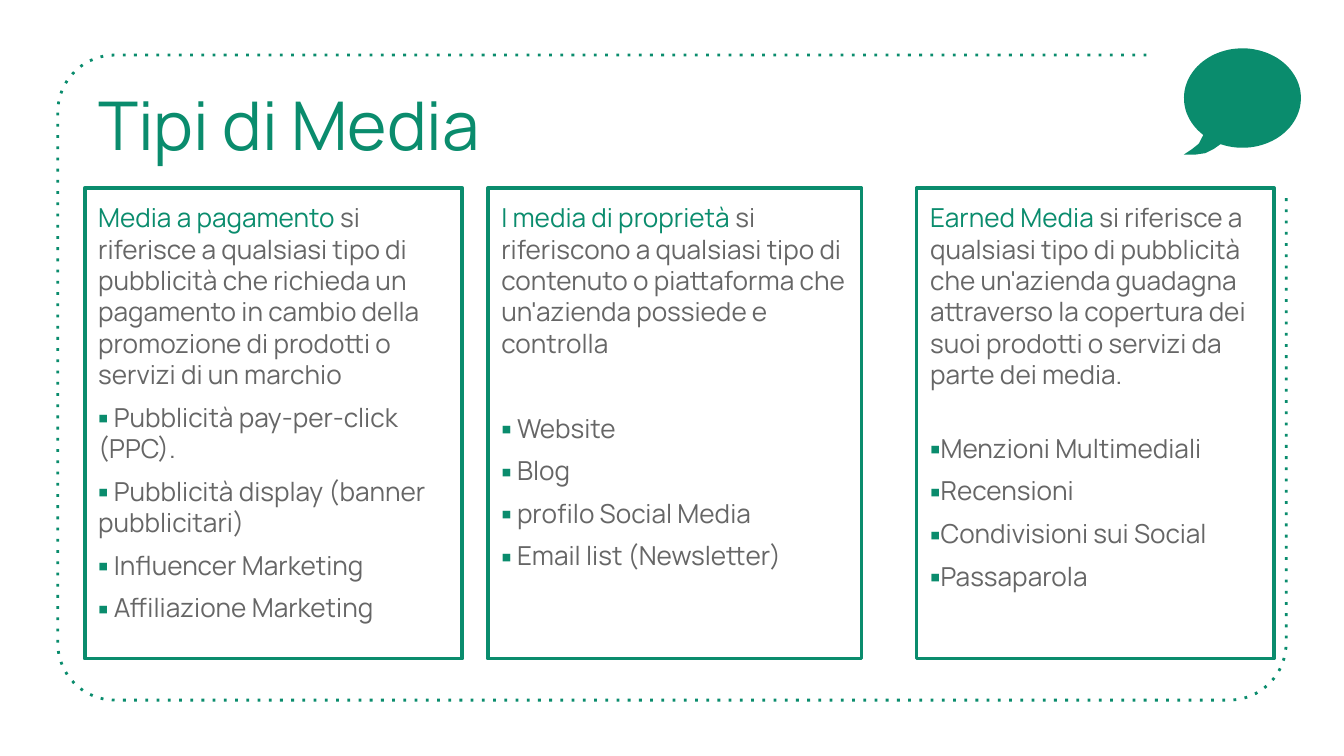
import math

import pptx
import pptx.dml.color
import pptx.enum.text
import pptx.oxml
import pptx.oxml.ns
import pptx.util

COLORS = {"green": "0A8C6D", "gray": "666666", "white": "FFFFFF"}

COLUMNS = [
    {
        "left": 6.3, "width": 28.1, "gap": 6,
        "term": "Media a pagamento ",
        "text": "si riferisce a qualsiasi tipo di pubblicità che richieda un pagamento "
                "in cambio della promozione di prodotti o servizi di un marchio",
        "items": [" Pubblicità pay-per-click (PPC).",
                  " Pubblicità display (banner pubblicitari)",
                  " Influencer Marketing", " Affiliazione Marketing"],
    },
    {
        "left": 36.3, "width": 27.8, "gap": 28.7,
        "term": "I media di proprietà ",
        "text": "si riferiscono a qualsiasi tipo di contenuto o piattaforma che "
                "un'azienda possiede e controlla",
        "items": [" Website", " Blog", " profilo Social Media",
                  " Email list (Newsletter)"],
    },
    {
        "left": 68.2, "width": 26.6, "gap": 22.7,
        "term": "Earned Media ",
        "text": "si riferisce a qualsiasi tipo di pubblicità che un'azienda guadagna "
                "attraverso la copertura dei suoi prodotti o servizi da parte dei media.",
        "items": ["Menzioni Multimediali", "Recensioni", "Condivisioni sui Social",
                  "Passaparola"],
    },
]


def arc(cx, cy, rx, ry, start, end, steps):
    angles = [math.radians(start + (end - start) * i / steps) for i in range(steps + 1)]
    return [(cx + rx * math.cos(a), cy + ry * math.sin(a)) for a in angles]


class Deck:
    font = "Manrope"
    grid_columns, grid_rows = 100, 56.25

    def __init__(self, width, height):
        self.prs = pptx.Presentation()
        self.prs.slide_width = pptx.util.Inches(width)
        self.prs.slide_height = pptx.util.Inches(height)
        self.slide = self.prs.slides.add_slide(self.prs.slide_layouts[4])

    def x(self, columns):
        return round(self.prs.slide_width * columns / self.grid_columns)

    def y(self, rows):
        return round(self.prs.slide_height * rows / self.grid_rows)

    def color(self, name):
        return pptx.dml.color.RGBColor.from_string(COLORS[name])

    def place(self, sp, left, top, width, height):
        sp.left, sp.top = self.x(left), self.y(top)
        sp.width, sp.height = self.x(width), self.y(height)
        tf = sp.text_frame
        tf.word_wrap = True
        tf.auto_size = pptx.enum.text.MSO_AUTO_SIZE.NONE
        tf.vertical_anchor = pptx.enum.text.MSO_ANCHOR.TOP
        tf.margin_left = tf.margin_right = self.x(1)
        tf.margin_top = tf.margin_bottom = self.y(1)
        return tf

    def paragraph(self, p, runs, size, before=0, bullet=None):
        p.alignment = pptx.enum.text.PP_ALIGN.LEFT
        p.space_before = pptx.util.Pt(before)
        pPr = p._p.get_or_add_pPr()
        pPr.set("marL", "0")
        pPr.set("indent", str(-self.x(1) if bullet else 0))
        ns = pptx.oxml.ns.nsdecls("a")
        if bullet:
            marks = [f'<a:buClr {ns}><a:srgbClr val="{COLORS["green"]}"/></a:buClr>',
                     f'<a:buFont {ns} typeface="{self.font}"/>',
                     f'<a:buChar {ns} char="{bullet}"/>']
        else:
            marks = [f"<a:buNone {ns}/>"]
        for mark in marks:
            pPr.append(pptx.oxml.parse_xml(mark))
        for text, color in runs:
            r = p.add_run()
            r.text = text
            r.font.name = self.font
            r.font.size = pptx.util.Pt(size)
            r.font.bold = False
            r.font.color.rgb = self.color(color)

    def title(self, text, *box):
        tf = self.place(self.slide.shapes.title, *box)
        self.paragraph(tf.paragraphs[0], [(text, "green")], 36)

    def card(self, idx, column, top, height):
        sp = self.slide.placeholders[idx]
        tf = self.place(sp, column["left"], top, column["width"], height)
        sp.fill.solid()
        sp.fill.fore_color.rgb = self.color("white")
        sp.line.color.rgb = self.color("green")
        sp.line.width = pptx.util.Pt(2)
        intro = [(column["term"], "green"), (column["text"], "gray")]
        self.paragraph(tf.paragraphs[0], intro, 14)
        for i, item in enumerate(column["items"]):
            before = 6 if i else column["gap"]
            self.paragraph(tf.add_paragraph(), [(item, "gray")], 14, before, "▪")

    def outline(self, points, close):
        points = [(self.x(px), self.y(py)) for px, py in points]
        builder = self.slide.shapes.build_freeform(*points[0])
        builder.add_line_segments(points[1:], close=close)
        sp = builder.convert_to_shape()
        sp.shadow.inherit = False
        return sp

    def dotted_frame(self, left, top, right, bottom, radius, start, end):
        corners = [(left + radius, top + radius, 270),
                   (left + radius, bottom - radius, 180),
                   (right - radius, bottom - radius, 90)]
        points = [start]
        for cx, cy, angle in corners:
            points += arc(cx, cy, radius, radius, angle, angle - 90, 16)
        sp = self.outline(points + [end], False)
        sp.fill.background()
        sp.line.color.rgb = self.color("green")
        sp.line.width = pptx.util.Pt(1.5)
        dash = f'<a:prstDash {pptx.oxml.ns.nsdecls("a")} val="dot"/>'
        sp.line._get_or_add_ln().append(pptx.oxml.parse_xml(dash))
        self.slide.shapes._spTree.insert(2, sp._element)

    def bubble(self, cx, cy, rx, ry, tail):
        sp = self.outline(arc(cx, cy, rx, ry, 132, 472, 90) + tail, True)
        sp.fill.solid()
        sp.fill.fore_color.rgb = self.color("green")
        sp.line.fill.background()

    def save_ready(self):
        for sp in list(self.slide.placeholders):
            if not sp.text_frame.text:
                sp._element.getparent().remove(sp._element)
        return self.prs


def main():
    deck = Deck(10, 5.625)
    deck.dotted_frame(4.3, 4.1, 95.7, 52.1, 4.25, (85.3, 4.1), (95.7, 14.6))
    deck.title("Tipi di Media", 6.3, 5.2, 75.1, 6.3)
    deck.bubble(92.45, 7.3, 4.35, 3.7,
                [(90.3, 11.1), (89.7, 11.4), (89, 11.5), (88.1, 11.5),
                 (88.7, 11.1), (89.2, 10.7)])
    for idx, column in enumerate(COLUMNS, start=1):
        deck.card(idx, column, 14, 35)
    prs = deck.save_ready()
    prs.save("out.pptx")


if __name__ == "__main__":
    main()
